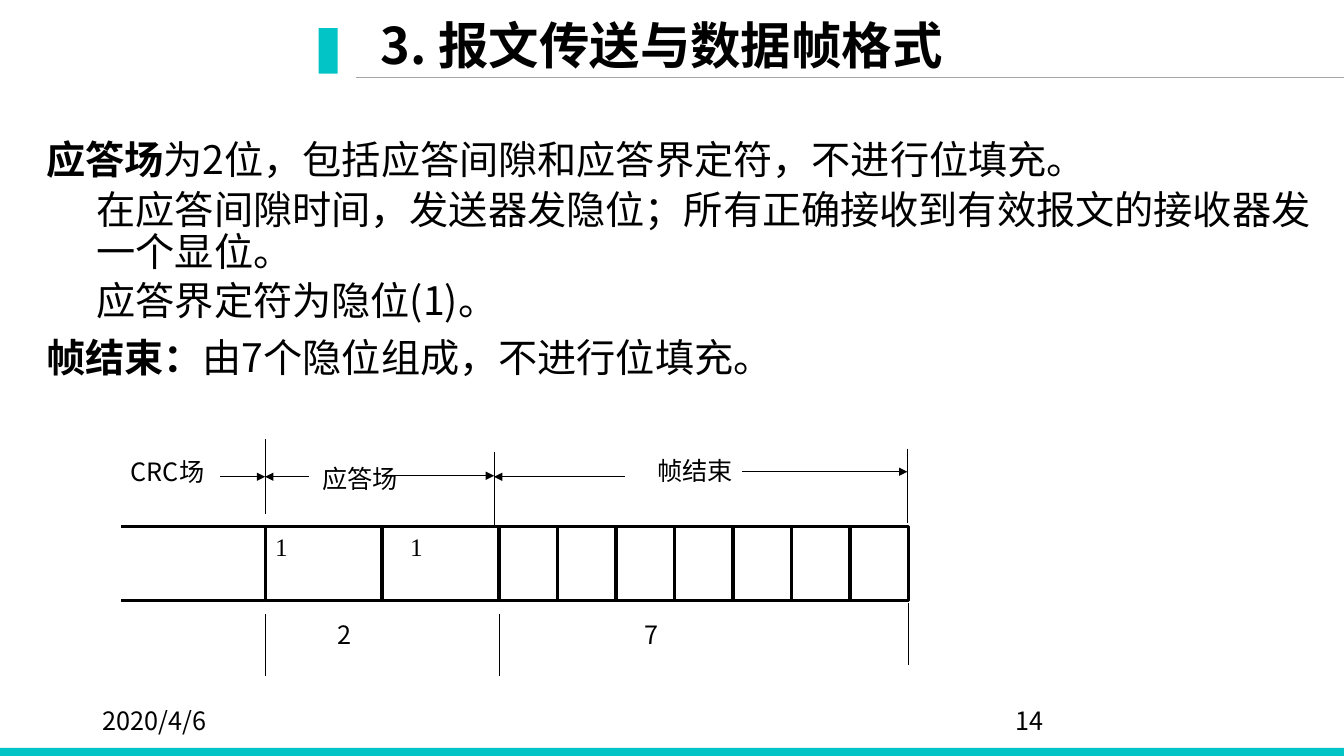
from lxml import etree
from pptx import Presentation
from pptx.dml.color import RGBColor
from pptx.enum.shapes import MSO_CONNECTOR, MSO_SHAPE
from pptx.enum.text import MSO_ANCHOR
from pptx.oxml.ns import qn
from pptx.util import Inches, Pt

STRAIGHT = MSO_CONNECTOR.STRAIGHT
RECTANGLE = MSO_SHAPE.RECTANGLE
MIDDLE = MSO_ANCHOR.MIDDLE
COLORS = {"accent": "02C4C7", "rule": "A5A5A5", "ink": "000000"}
SANS, BODY, SERIF = "Noto Sans CJK SC", "Noto Sans CJK JP", "Times New Roman"

prs = Presentation()
prs.slide_width, prs.slide_height = Inches(13.33), Inches(7.5)
slide = prs.slides.add_slide(prs.slide_layouts[6])
shapes = slide.shapes


def add_line(x1, y1, x2, y2, width, color="ink", arrow=False):
    line = shapes.add_connector(STRAIGHT, Inches(x1), Inches(y1), Inches(x2), Inches(y2))
    line.line.color.rgb = RGBColor.from_string(COLORS[color])
    line.line.width = Pt(width)
    if arrow:
        etree.SubElement(line.line._get_or_add_ln(), qn("a:tailEnd"), type="triangle")
    etree.SubElement(line._element.spPr, qn("a:effectLst"))


def add_run(paragraph, text, size, face, bold=False):
    run = paragraph.add_run()
    run.text = text
    for key, value in {"size": Pt(size), "name": face, "bold": bold}.items():
        setattr(run.font, key, value)
    run.font.color.rgb = RGBColor.from_string(COLORS["ink"])
    etree.SubElement(run._r.get_or_add_rPr(), qn("a:ea"), typeface=face)


for left, top, width, height in [(0, 7.42, 13.33, 0.08), (3.16, 0.28, 0.19, 0.45)]:
    accent = shapes.add_shape(RECTANGLE, Inches(left), Inches(top), Inches(width), Inches(height))
    accent.shadow.inherit = False
    accent.fill.solid()
    accent.fill.fore_color.rgb = RGBColor.from_string(COLORS["accent"])
    accent.line.fill.background()
add_line(3.53, 0.77, 13.33, 0.77, 0.5, "rule")

title = shapes.add_textbox(Inches(3.68), Inches(0.13), Inches(8.99), Inches(0.7)).text_frame
title.word_wrap = True
title.vertical_anchor = MIDDLE
title.paragraphs[0].line_spacing = 0.9
add_run(title.paragraphs[0], "3. 报文传送与数据帧格式", 36, SANS, True)

explanation = shapes.add_textbox(Inches(0.36), Inches(1.35), Inches(12.97), Inches(2.6)).text_frame
explanation.word_wrap = True
statements = [
    (0, "应答场", "为2位，包括应答间隙和应答界定符，不进行位填充。"),
    (1, "", "在应答间隙时间，发送器发隐位；所有正确接收到有效报文的接收器发一个显位。"),
    (1, "", "应答界定符为隐位(1)。"),
    (0, "帧结束：", "由7个隐位组成，不进行位填充。"),
]
for index, (level, term, detail) in enumerate(statements):
    statement = explanation.paragraphs[0] if index == 0 else explanation.add_paragraph()
    statement.level = level
    statement.line_spacing = 0.9
    if index:
        statement.space_before = Pt(5 if level else 10)
    if level:
        statement._p.get_or_add_pPr().set("marL", str(Inches(0.5)))
    if term:
        add_run(statement, term, 28, SANS, True)
    add_run(statement, detail, 28, BODY)

frame_left, frame_top, frame_height, bit = 2.63, 5.22, 0.74, 0.58
for start, span in [(0, 2), (2, 2), (4, 2), (5, 2), (7, 2), (8, 2), (10, 1)]:
    field = shapes.add_shape(RECTANGLE, Inches(frame_left + start * bit), Inches(frame_top),
                             Inches(span * bit), Inches(frame_height))
    field.shadow.inherit = False
    field.fill.background()
    field.line.color.rgb = RGBColor.from_string(COLORS["ink"])
    field.line.width = Pt(2.25)
for crc_edge in (frame_top, frame_top + frame_height):
    add_line(frame_left, crc_edge, 1.2, crc_edge, 2.25)

for x, top, bottom in [(2.63, 4.36, 5.1), (4.9, 4.48, 5.22), (9, 4.45, 5.19),
                       (2.63, 6.09, 6.71), (4.95, 6.09, 6.71), (9.01, 5.98, 6.6)]:
    add_line(x, top, x, bottom, 0.75)
for tail, head, y in [(2.18, 2.63, 4.73), (3.06, 2.63, 4.73), (3.92, 4.9, 4.72),
                      (6.2, 4.9, 4.73), (7.36, 9, 4.68)]:
    add_line(tail, y, head, y, 0.75, arrow=True)

labels = [
    ("CRC场", 1.2, 4.48, 1.16, SANS),
    ("应答场", 3.1, 4.55, 1.16, SANS),
    ("帧结束", 6.42, 4.47, 2.19, SANS),
    ("1", 2.63, 5.22, 1.16, SERIF),
    ("1", 3.97, 5.22, 1.16, SERIF),
    ("2", 3.25, 6.09, 1.16, SANS),
    ("7", 6.29, 6.09, 1.7, SANS),
    ("2020/4/6", 0.92, 6.95, 3, SANS),
    ("14", 9.97, 6.95, 3, SANS),
]
for text, left, top, width, face in labels:
    label = shapes.add_textbox(Inches(left), Inches(top), Inches(width), Inches(0.4)).text_frame
    label.word_wrap = True
    add_run(label.paragraphs[0], text, 18, face)

prs.save("out.pptx")
